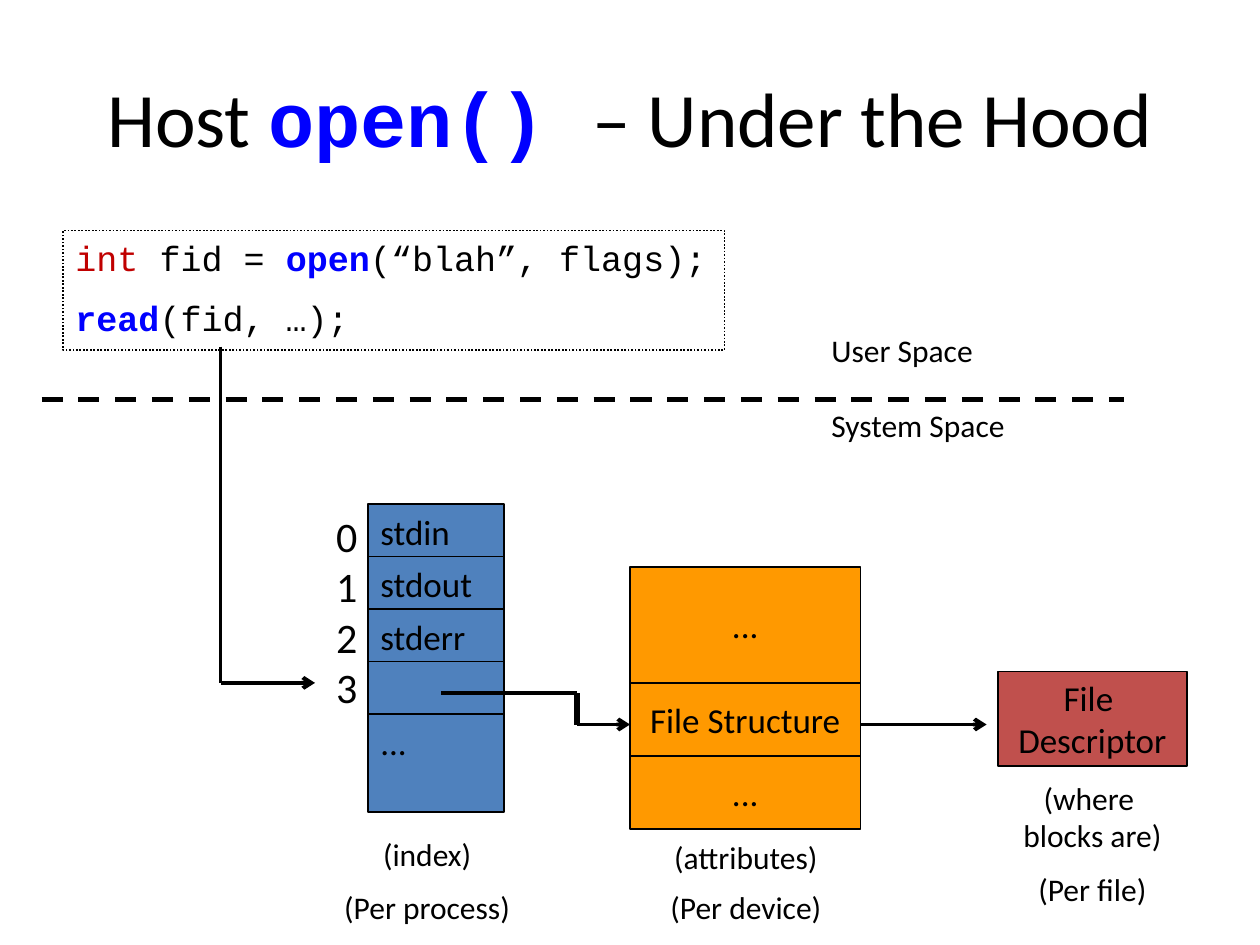
import pptx
import pptx.util
import pptx.dml.color
import pptx.enum.dml
import pptx.enum.shapes
import pptx.enum.text
import pptx.oxml
import pptx.oxml.ns

Inches, Pt = pptx.util.Inches, pptx.util.Pt
ALIGN, ANCHOR = pptx.enum.text.PP_ALIGN, pptx.enum.text.MSO_ANCHOR
DASH = pptx.enum.dml.MSO_LINE

# Content: each paragraph is a list of (text, style) spans
BLACK, BLUE, RED, ORANGE = "000000", "4F81BD", "C0504D", "FF9900"
STYLES = {
    "title": dict(name="Calibri", size=44),
    "title code": dict(name="Courier New", size=44, bold=True, color="0000FF"),
    "code": dict(name="Courier New", size=20),
    "type": dict(name="Courier New", size=20, color="C00000"),
    "call": dict(name="Courier New", size=20, bold=True, color="0000FF"),
    "index": dict(name="Calibri", size=24),
    "cell": dict(name="Calibri", size=20),
    "label": dict(name="Calibri", size=18),
}
TITLE = [[("Host ", "title"), ("open() ", "title code"), ("– Under the Hood", "title")]]
CODE = [
    [("int ", "type"), ("fid = ", "code"), ("open", "call"), ("(“blah”, flags);", "code")],
    [("read", "call"), ("(fid, …);", "code")],
]
DESCRIPTORS = ["stdin", "stdout", "stderr", "", "..."]
DEVICE_TABLE = [("...", 0.92), ("File Structure", 0.58), ("...", 0.58)]
SPACES = [("User Space", 2.58, 1.71), ("System Space", 3.17, 2.06)]
# Captions: lines, centre x, top, width, height
CAPTIONS = [
    (["(index)"], 3.39, 6.58, 0.91, 0.4),
    (["(Per process)"], 3.39, 7, 1.53, 0.4),
    (["(attributes)"], 5.92, 6.6, 1.36, 0.4),
    (["(Per device)"], 5.92, 7, 1.42, 0.4),
    (["(where ", "blocks are)"], 8.67, 6.13, 1.31, 0.71),
    (["(Per file)"], 8.67, 6.86, 1.07, 0.4),
]
# Routes: corner points, widths of the segments, arrowhead at the end
ROUTES = [
    ([(1.75, 2.75), (1.75, 5.42), (2.5, 5.42)], [2.25, 2.25]),
    ([(3.5, 5.5), (4.58, 5.5), (4.58, 5.75), (5, 5.75)], [2.25, 3, 2.25]),
    ([(6.83, 5.75), (7.83, 5.75)], [2.25]),
]

deck = pptx.Presentation()
deck.slide_width, deck.slide_height = Inches(10), Inches(7.5)
page = deck.slides.add_slide(deck.slide_layouts[6])


def rgb(value):
    return pptx.dml.color.RGBColor.from_string(value)


def lines_of(style, *lines):
    return [[(line, style)] for line in lines]


def write(box, paragraphs, align=ALIGN.LEFT, anchor=ANCHOR.TOP, wrap=True):
    frame = box.text_frame
    frame.word_wrap, frame.vertical_anchor = wrap, anchor
    for number, spans in enumerate(paragraphs):
        para = frame.add_paragraph() if number else frame.paragraphs[0]
        para.alignment = align
        for text, style in spans:
            span = para.add_run()
            span.text = text
            form = {"bold": False, "color": BLACK, **STYLES[style]}
            span.font.color.rgb = rgb(form.pop("color"))
            form["size"] = Pt(form["size"])
            for key, value in form.items():
                setattr(span.font, key, value)
    return box


def add_text(place, paragraphs, **layout):
    box = page.shapes.add_textbox(*map(Inches, place))
    return write(box, paragraphs, **layout)


def add_box(place, paragraphs, fill=None, **layout):
    box = page.shapes.add_shape(
        pptx.enum.shapes.MSO_SHAPE.RECTANGLE, *map(Inches, place))
    box.shadow.inherit = False
    if fill:
        box.fill.solid()
        box.fill.fore_color.rgb = rgb(fill)
    else:
        box.fill.background()
    box.line.color.rgb, box.line.width = rgb(BLACK), Pt(1)
    return write(box, paragraphs, **layout)


def add_line(start, end, width, arrow=False):
    line = page.shapes.add_connector(
        pptx.enum.shapes.MSO_CONNECTOR.STRAIGHT, *map(Inches, start + end))
    line.line.color.rgb, line.line.width = rgb(BLACK), Pt(width)
    if arrow:
        tail = pptx.oxml.ns.qn("a:tailEnd")
        line.line._get_or_add_ln().append(
            line._element.makeelement(tail, {"type": "arrow"}))
    effects = pptx.oxml.ns.qn("a:effectLst")
    line._element.spPr.append(line._element.makeelement(effects, {}))
    return line


# Title and code
add_text((0.5, 0.3, 9, 1.25), TITLE, align=ALIGN.CENTER, anchor=ANCHOR.MIDDLE)
code_box = add_box((0.5, 1.83, 5.25, 0.95), CODE)
code_box.line.dash_style = DASH.ROUND_DOT
for para in code_box.text_frame.paragraphs:
    # Space before as half a line
    para._p.get_or_add_pPr().append(pptx.oxml.parse_xml(
        f'<a:spcBef {pptx.oxml.ns.nsdecls("a")}><a:spcPct val="50000"/></a:spcBef>'))

# Border between user and system space
border = add_line((0.33, 3.17), (8.92, 3.17), 3)
border.line.dash_style = DASH.DASH
for text, top, width in SPACES:
    add_text((6.5, top, width, 0.5), lines_of("label", text), wrap=False)

# Descriptor table of the process, with its index
for row, text in enumerate(DESCRIPTORS):
    height = 0.78 if row == len(DESCRIPTORS) - 1 else 0.45
    add_box((2.92, 4 + row * 5 / 12, 1.08, height),
            lines_of("cell", text) if text else [], BLUE)
add_text((2.57, 4, 0.37, 1.72), lines_of("index", *"0123"))

# Device table and file descriptor
centred = dict(align=ALIGN.CENTER, anchor=ANCHOR.MIDDLE, wrap=False)
top = 4.5
for text, height in DEVICE_TABLE:
    add_box((5, top, 1.83, height), lines_of("cell", text), ORANGE, **centred)
    top += height
add_box((7.92, 5.33, 1.5, 0.75), lines_of("cell", "File ", "Descriptor"), RED, **centred)

# Arrows
for points, widths in ROUTES:
    for step, width in enumerate(widths):
        add_line(points[step], points[step + 1], width, step == len(widths) - 1)

# Captions
for lines, centre, top, width, height in CAPTIONS:
    add_text((centre - width / 2, top, width, height), lines_of("label", *lines),
             align=ALIGN.CENTER, wrap=False)

deck.save("out.pptx")
